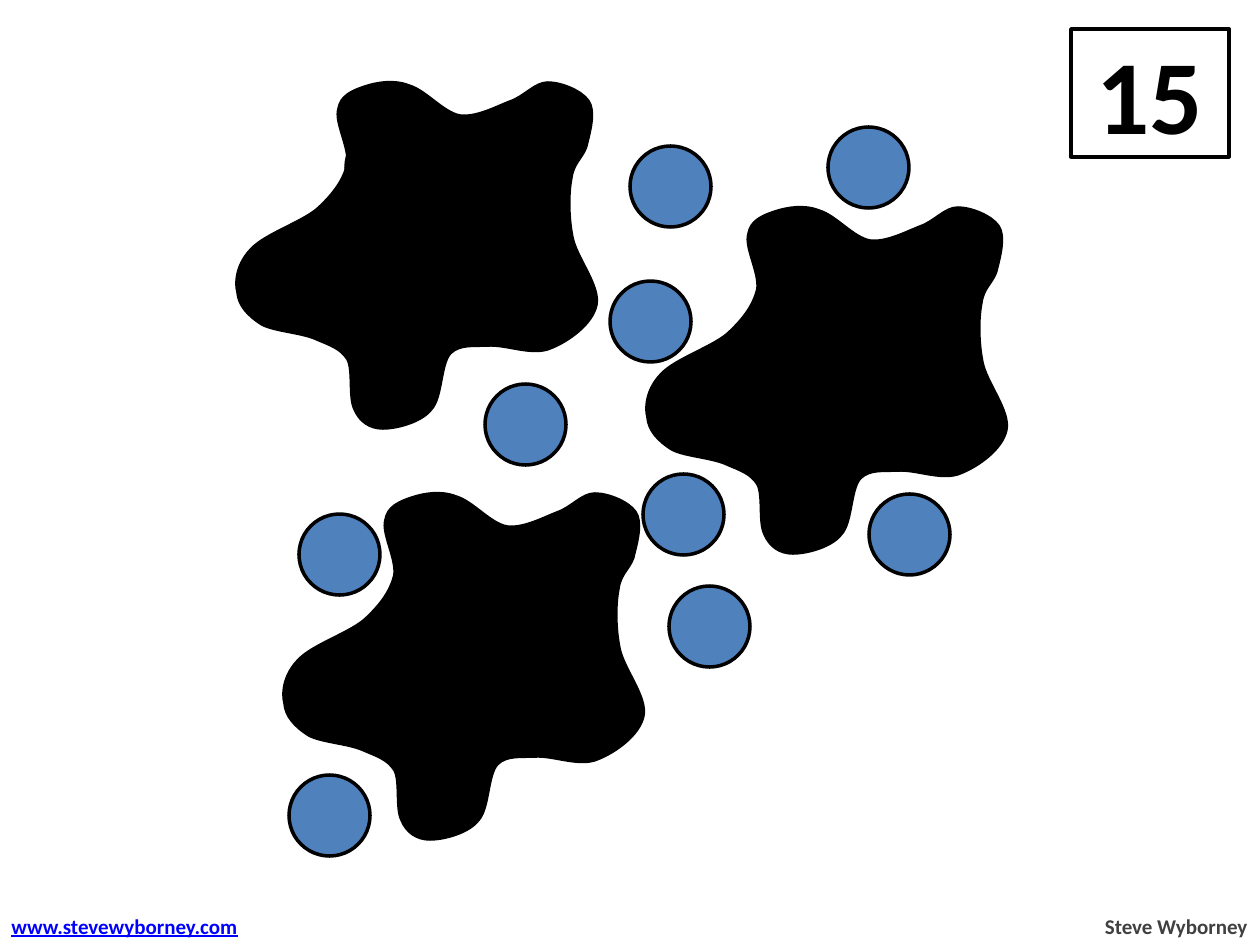
from pptx import Presentation
from pptx.dml.color import RGBColor
from pptx.enum.shapes import MSO_SHAPE
from pptx.enum.text import MSO_ANCHOR, MSO_AUTO_SIZE, PP_ALIGN
from pptx.oxml.ns import qn
from pptx.util import Emu, Inches, Pt

RECTANGLE, OVAL = MSO_SHAPE.RECTANGLE, MSO_SHAPE.OVAL
LEFT, CENTER, RIGHT = PP_ALIGN.LEFT, PP_ALIGN.CENTER, PP_ALIGN.RIGHT
MIDDLE = MSO_ANCHOR.MIDDLE
GROW = MSO_AUTO_SIZE.SHAPE_TO_FIT_TEXT

BLACK = RGBColor(0x00, 0x00, 0x00)
WHITE = RGBColor(0xFF, 0xFF, 0xFF)
DOT_BLUE = RGBColor(0x4F, 0x81, 0xBD)
LINK_BLUE = RGBColor(0x00, 0x00, 0xFF)
GREY = RGBColor(0x40, 0x40, 0x40)

FONT = "Calibri"
PX_PER_INCH = 126
SCALE = Inches(1) / PX_PER_INCH

DOT_SIZE = 81
DOTS = [
    (365, 272), (406, 696), (828, 263), (346, 127), (485, 384),
    (299, 514), (289, 775), (610, 281), (828, 127), (454, 548),
    (643, 474), (869, 494), (732, 348), (669, 586), (630, 146),
]

# One splat outline, used at three places
SPLATS = [(238, 83), (648, 208), (285, 494)]
SPLAT_START = (24, 241)
# Each row is a Bézier curve: two control points, then the end point
SPLAT_CURVES = [
    [(10, 232), (1, 222), (0, 209)],
    [(-3, 198), (0, 180), (14, 166)],
    [(28, 151), (66, 139), (81, 125)],
    [(97, 110), (106, 97), (110, 81)],
    [(112, 64), (97, 39), (101, 26)],
    [(103, 13), (115, 8), (127, 4)],
    [(139, 0), (156, -3), (171, 3)],
    [(188, 8), (205, 30), (222, 33)],
    [(238, 35), (257, 25), (272, 19)],
    [(287, 14), (297, 0), (310, 0)],
    [(323, 0), (343, 8), (350, 18)],
    [(357, 28), (352, 47), (349, 59)],
    [(347, 73), (335, 78), (333, 95)],
    [(330, 110), (330, 134), (334, 154)],
    [(338, 175), (362, 203), (358, 222)],
    [(354, 241), (330, 258), (312, 265)],
    [(295, 272), (271, 262), (253, 262)],
    [(237, 263), (222, 260), (212, 270)],
    [(202, 281), (204, 314), (193, 326)],
    [(183, 339), (158, 345), (145, 345)],
    [(132, 345), (122, 338), (117, 326)],
    [(111, 314), (116, 287), (110, 276)],
    [(103, 265), (93, 262), (79, 256)],
    [(64, 249), (37, 248), SPLAT_START],
]


def px(length):
    return Emu(round(length * SCALE))


def style_shape(shape, fill):
    shape.shadow.inherit = False
    shape.fill.solid()
    shape.fill.fore_color.rgb = fill
    shape.line.color.rgb = BLACK
    shape.line.width = Pt(2)


def write(frame, text, size, color, align, underline=None):
    para = frame.paragraphs[0]
    para.text = text
    para.alignment = align
    font = para.font
    font.name, font.size, font.bold = FONT, Pt(size), True
    font.underline = underline
    font.color.rgb = color


def add_preset(page, kind, left, top, width, height, fill):
    shape = page.shapes.add_shape(kind, px(left), px(top), px(width), px(height))
    style_shape(shape, fill)
    return shape


def add_footer(page, left, width, text, color, align, underline=None):
    box = page.shapes.add_textbox(px(left), px(907), px(width), px(38))
    box.text_frame.word_wrap = False
    box.text_frame.auto_size = GROW
    write(box.text_frame, text, 12, color, align, underline)


def add_splat(page, left, top):
    points = [point for curve in SPLAT_CURVES for point in curve]
    builder = page.shapes.build_freeform(*SPLAT_START, scale=SCALE)
    builder.add_line_segments(points, close=True)
    shape = builder.convert_to_shape(px(left), px(top))
    # Merge every three line segments into one curve
    segments = list(shape.element.iter(qn("a:lnTo")))
    for index in range(0, len(segments), 3):
        first, *others = segments[index:index + 3]
        curve = first.makeelement(qn("a:cubicBezTo"), {})
        first.addprevious(curve)
        for segment in (first, *others):
            curve.append(segment[0])
            segment.getparent().remove(segment)
    style_shape(shape, BLACK)


def main():
    deck = Presentation()
    deck.slide_width, deck.slide_height = Inches(10), Inches(7.5)
    page = deck.slides.add_slide(deck.slide_layouts[6])

    # Total number of dots
    total = add_preset(page, RECTANGLE, 1071, 29, 158, 128, WHITE)
    total.text_frame.vertical_anchor = MIDDLE
    write(total.text_frame, "15", 60, BLACK, CENTER)

    # Footer
    add_footer(page, 1091, 169, "Steve Wyborney", GREY, RIGHT)
    add_footer(page, -1, 258, "www.stevewyborney.com", LINK_BLUE, LEFT, True)

    # Dots, some of them covered by the splats
    for left, top in DOTS:
        add_preset(page, OVAL, left, top, DOT_SIZE, DOT_SIZE, DOT_BLUE)
    for left, top in SPLATS:
        add_splat(page, left, top)

    deck.save("out.pptx")


if __name__ == "__main__":
    main()
